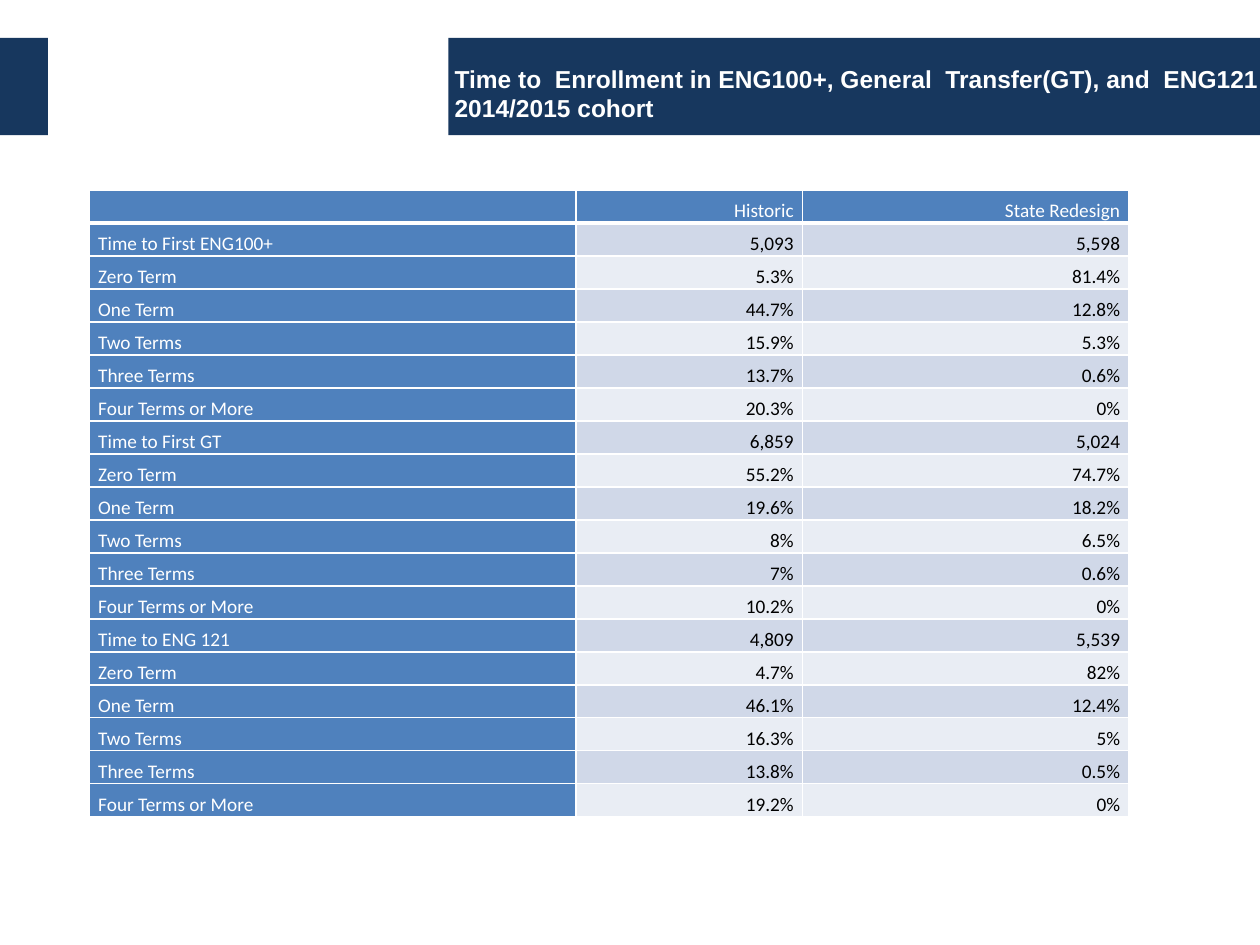
from dataclasses import dataclass

from lxml.etree import SubElement
from pptx import Presentation
from pptx.dml.color import RGBColor
from pptx.enum.shapes import MSO_SHAPE as Shape
from pptx.enum.text import MSO_ANCHOR as Anchor, PP_ALIGN as Align
from pptx.oxml.ns import qn
from pptx.util import Inches, Pt

COLORS = {
    "navy": "17375E",
    "blue": "4F81BD",
    "band_dark": "D0D8E8",
    "band_light": "E9EDF4",
    "white": "FFFFFF",
    "black": "000000",
}
WIDTH, HEIGHT = Inches(10), Inches(7.5)
BAND_TOP, BAND_HEIGHT = 0.04, 0.103
COLUMN_SHARES = (0.386, 0.18, 0.259)
TERMS = ("Zero Term", "One Term", "Two Terms", "Three Terms", "Four Terms or More")


@dataclass(frozen=True)
class Box:
    left: float
    top: float
    width: float
    height: float

    def lengths(self) -> tuple[int, ...]:
        return (int(self.left * WIDTH), int(self.top * HEIGHT),
                int(self.width * WIDTH), int(self.height * HEIGHT))


@dataclass(frozen=True)
class Section:
    heading: str
    totals: tuple[str, str]
    historic: tuple[str, ...]
    redesign: tuple[str, ...]

    def rows(self) -> list[tuple[str, ...]]:
        return [(self.heading, *self.totals), *zip(TERMS, self.historic, self.redesign)]


BANDS = (
    Box(0.356, BAND_TOP, 0.644, BAND_HEIGHT),
    Box(0, BAND_TOP, 0.038, BAND_HEIGHT),
)
TITLE_BOX = Box(0.351, 0.023, 0.696, 0.12)
TABLE_BOX = Box(0.071, 0.201, sum(COLUMN_SHARES), 0.664)
SECTIONS = (
    Section("Time to First ENG100+", ("5,093", "5,598"),
            ("5.3%", "44.7%", "15.9%", "13.7%", "20.3%"),
            ("81.4%", "12.8%", "5.3%", "0.6%", "0%")),
    Section("Time to First GT", ("6,859", "5,024"),
            ("55.2%", "19.6%", "8%", "7%", "10.2%"),
            ("74.7%", "18.2%", "6.5%", "0.6%", "0%")),
    Section("Time to ENG 121", ("4,809", "5,539"),
            ("4.7%", "46.1%", "16.3%", "13.8%", "19.2%"),
            ("82%", "12.4%", "5%", "0.5%", "0%")),
)


def rgb(name: str) -> RGBColor:
    return RGBColor.from_string(COLORS[name])


def write_text(frame, text: str, *, font: str, size: float, color: str,
               bold: bool = False, align=Align.LEFT, spacing: float = 1.0) -> None:
    paragraph = frame.paragraphs[0]
    paragraph.alignment = align
    paragraph.line_spacing = spacing
    if not text:
        SubElement(paragraph._p, qn("a:endParaRPr"), sz=str(int(size * 100)))
        return
    paragraph.text = text
    for run in paragraph.runs:
        run.font.name = font
        run.font.size = Pt(size)
        run.font.bold = bold
        run.font.color.rgb = rgb(color)


def add_band(slide, box: Box) -> None:
    shape = slide.shapes.add_shape(Shape.RECTANGLE, *box.lengths())
    shape.shadow.inherit = False
    shape.fill.solid()
    shape.fill.fore_color.rgb = rgb("navy")
    shape.line.fill.background()


def add_title(slide) -> None:
    frame = slide.shapes.add_textbox(*TITLE_BOX.lengths()).text_frame
    frame.word_wrap = True
    frame.vertical_anchor = Anchor.MIDDLE
    frame.margin_top = Inches(0.28)
    write_text(frame, "Time to  Enrollment in ENG100+, General  Transfer(GT), and  ENG121"
               "\v2014/2015 cohort", font="Arial", size=14, color="white", bold=True)


def add_borders(cell, bottom: float) -> None:
    properties = cell._tc.get_or_add_tcPr()
    for side, points in (("L", 1), ("R", 1), ("T", 1), ("B", bottom)):
        line = SubElement(properties, qn(f"a:ln{side}"), w=str(Pt(points)))
        fill = SubElement(line, qn("a:solidFill"))
        SubElement(fill, qn("a:srgbClr"), val=COLORS["white"])


def format_cell(cell, text: str, row: int, column: int) -> None:
    is_heading = row == 0 or column == 0
    band = "band_dark" if row % 2 else "band_light"
    add_borders(cell, bottom=3 if row == 0 else 1)
    cell.fill.solid()
    cell.fill.fore_color.rgb = rgb("blue" if is_heading else band)
    cell.vertical_anchor = Anchor.BOTTOM
    cell.margin_left = cell.margin_right = Inches(0.07)
    cell.margin_top = cell.margin_bottom = 0
    write_text(cell.text_frame, text, font="Calibri", size=11,
               color="white" if is_heading else "black",
               align=Align.RIGHT if column else Align.LEFT, spacing=1.15)


def add_enrollment_table(slide) -> None:
    rows = [("", "Historic", "State Redesign")]
    for section in SECTIONS:
        rows.extend(section.rows())
    table = slide.shapes.add_table(len(rows), len(COLUMN_SHARES), *TABLE_BOX.lengths()).table
    for column, share in zip(table.columns, COLUMN_SHARES):
        column.width = int(share * WIDTH)
    for row, values in enumerate(rows):
        for column, text in enumerate(values):
            format_cell(table.cell(row, column), text, row, column)


def main() -> None:
    presentation = Presentation()
    presentation.slide_width, presentation.slide_height = WIDTH, HEIGHT
    slide = presentation.slides.add_slide(presentation.slide_layouts[6])
    for box in BANDS:
        add_band(slide, box)
    add_title(slide)
    add_enrollment_table(slide)
    presentation.save("out.pptx")


if __name__ == "__main__":
    main()
